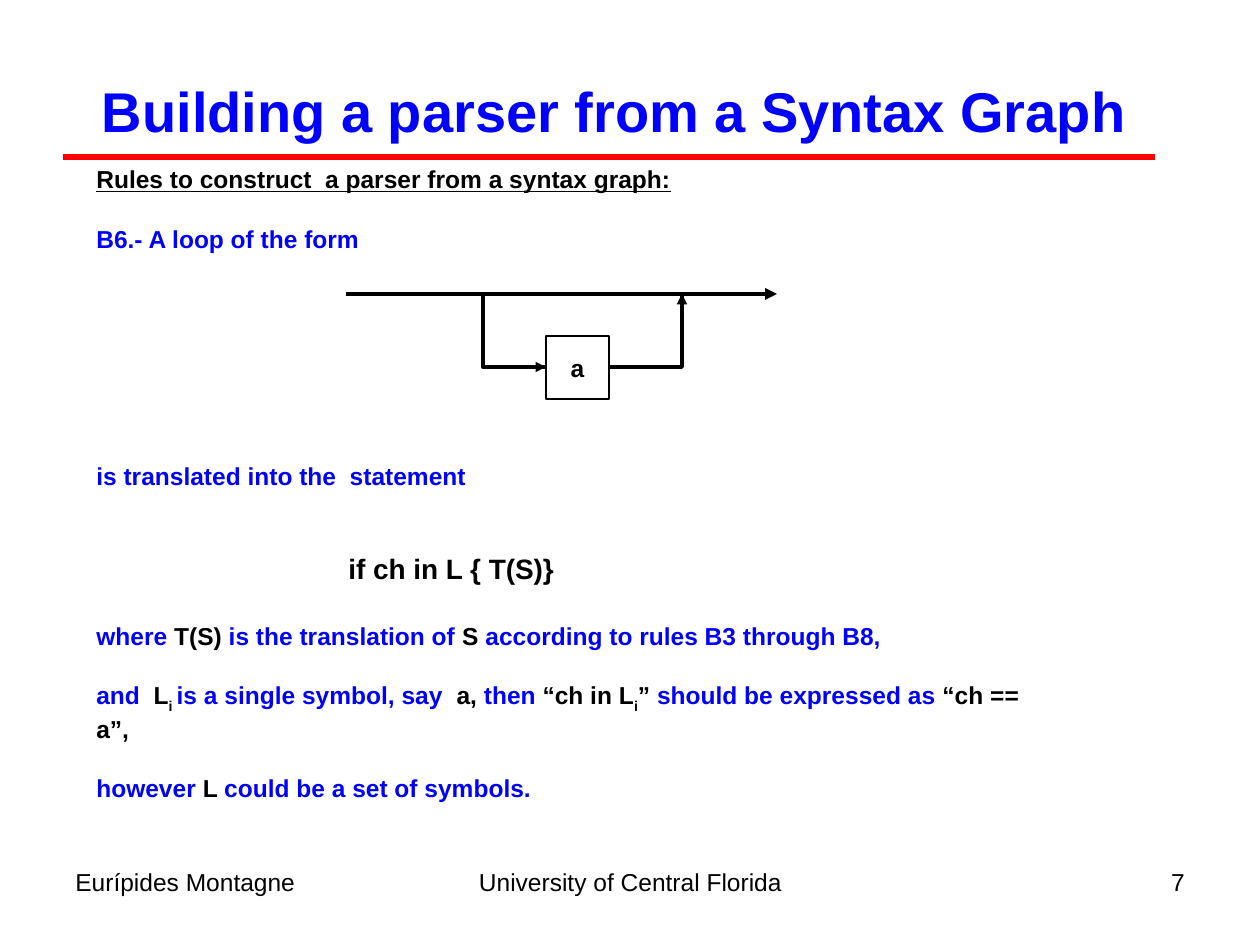
import pptx
import pptx.dml.color
import pptx.enum.shapes
import pptx.enum.text
import pptx.oxml.ns
import pptx.util
from lxml import etree

BLACK = pptx.dml.color.RGBColor(0, 0, 0)
WHITE = pptx.dml.color.RGBColor(255, 255, 255)
BLUE = pptx.dml.color.RGBColor(0, 0, 255)
RED = pptx.dml.color.RGBColor(255, 0, 0)
ALIGN = pptx.enum.text.PP_ALIGN
ANCHOR = pptx.enum.text.MSO_ANCHOR
PX_PER_INCH = 126


def px(length):
    return pptx.util.Emu(round(length * 914400 / PX_PER_INCH))


def add_child(parent, tag, **attributes):
    return etree.SubElement(parent, pptx.oxml.ns.qn(tag), attributes)


class Painter:
    font = "Arial"
    size = 14

    def __init__(self, page):
        self.page = page

    def span(self, para, text, color=BLACK, size=None, bold=False,
             underline=False, subscript=False):
        run = para.add_run()
        run.text = text
        run.font.name = self.font
        run.font.size = pptx.util.Pt(size or self.size)
        run.font.bold = bold
        run.font.underline = underline
        run.font.color.rgb = color
        if subscript:
            run.font._element.set("baseline", "-25000")

    def text_box(self, left, top, width, height, anchor=ANCHOR.TOP):
        box = self.page.shapes.add_textbox(px(left), px(top), px(width), px(height))
        box.text_frame.word_wrap = True
        box.text_frame.vertical_anchor = anchor
        return box.text_frame

    def label(self, left, top, width, height, text, align, anchor=ANCHOR.TOP, **style):
        para = self.text_box(left, top, width, height, anchor).paragraphs[0]
        para.alignment = align
        self.span(para, text, **style)

    def body(self, left, top, width, height, paragraphs):
        """Each paragraph is (gap above, left indent, spans)."""
        frame = self.text_box(left, top, width, height)
        for index, (gap, indent, spans) in enumerate(paragraphs):
            para = frame.add_paragraph() if index else frame.paragraphs[0]
            para.space_before = px(gap)
            if indent:
                para._p.get_or_add_pPr().set("marL", str(px(indent)))
            for text, style in spans:
                self.span(para, text, bold=True, **style)

    def line(self, start, end, color, weight, arrow=False):
        line = self.page.shapes.add_connector(
            pptx.enum.shapes.MSO_CONNECTOR.STRAIGHT, *map(px, start + end))
        line.line.color.rgb = color
        line.line.width = pptx.util.Pt(weight)
        if arrow:
            add_child(line.line._get_or_add_ln(), "a:tailEnd", type="triangle")
        add_child(line._element.spPr, "a:effectLst")

    def rectangle(self, left, top, width, height, weight, fill=None, text=None):
        box = self.page.shapes.add_shape(
            pptx.enum.shapes.MSO_SHAPE.RECTANGLE,
            px(left), px(top), px(width), px(height))
        box.shadow.inherit = False
        box.line.color.rgb = BLACK
        box.line.width = pptx.util.Pt(weight)
        if fill is None:
            box.fill.background()
        else:
            box.fill.solid()
            box.fill.fore_color.rgb = fill
        if text:
            box.text_frame.word_wrap = False
            box.text_frame.vertical_anchor = ANCHOR.MIDDLE
            para = box.text_frame.paragraphs[0]
            para.alignment = ALIGN.CENTER
            self.span(para, text, bold=True)


def main():
    deck = pptx.Presentation()
    deck.slide_width, deck.slide_height = px(1260), px(945)
    painter = Painter(deck.slides.add_slide(deck.slide_layouts[6]))

    for left, width, text, align in (
            (63, 294, "Eurípides Montagne", ALIGN.LEFT),
            (431, 399, "University of Central Florida", ALIGN.CENTER),
            (903, 294, "7", ALIGN.RIGHT)):
        painter.label(left, 861, width, 65, text, align)

    painter.label(32, 32, 1165, 157, "Building a parser from a Syntax Graph",
                  ALIGN.CENTER, ANCHOR.MIDDLE, color=BLUE, size=32, bold=True)
    painter.line((63, 157), (1155, 157), RED, 3)

    blue, black = {"color": BLUE}, {"color": BLACK}
    sub = {"subscript": True}
    painter.body(84, 158, 984, 607, (
        (0, 0, [("Rules to construct  a parser from a syntax graph:",
                 {"underline": True})]),
        (30, 0, [("B6.- A loop of the form", blue)]),
        (208, 0, [("is translated into the  statement", blue)]),
        (61, 252, [("if ch in L { T(S)}", {"size": 16})]),
        (36, 0, [("where", blue), (" T(S) ", black), ("is the translation of", blue),
                 (" S ", black), ("according to rules B3 through B8,", blue)]),
        (30, 0, [("and", blue), ("  L", black), ("i ", sub),
                 ("is a single symbol, say", blue), ("  a, ", black), ("then", blue),
                 (" “ch in L", black), ("i", sub), ("” ", black),
                 ("should be expressed as", blue), (" “ch == a”,", black)]),
        (30, 0, [("however", blue), (" L ", black),
                 ("could be a set of symbols.", blue)]),
    ))

    top, bottom, loop_left, loop_right = 294, 367, 483, 682
    painter.line((346, top), (777, top), BLACK, 2.25, arrow=True)
    painter.rectangle(loop_left, top, loop_right - loop_left, bottom - top, 2.25)
    painter.rectangle(546, 336, 63, 63, 0.75, WHITE, "a")
    painter.line((loop_right, 315), (loop_right, top), BLACK, 0.75, arrow=True)
    painter.line((514, bottom), (546, bottom), BLACK, 0.75, arrow=True)

    deck.save("out.pptx")


if __name__ == "__main__":
    main()
